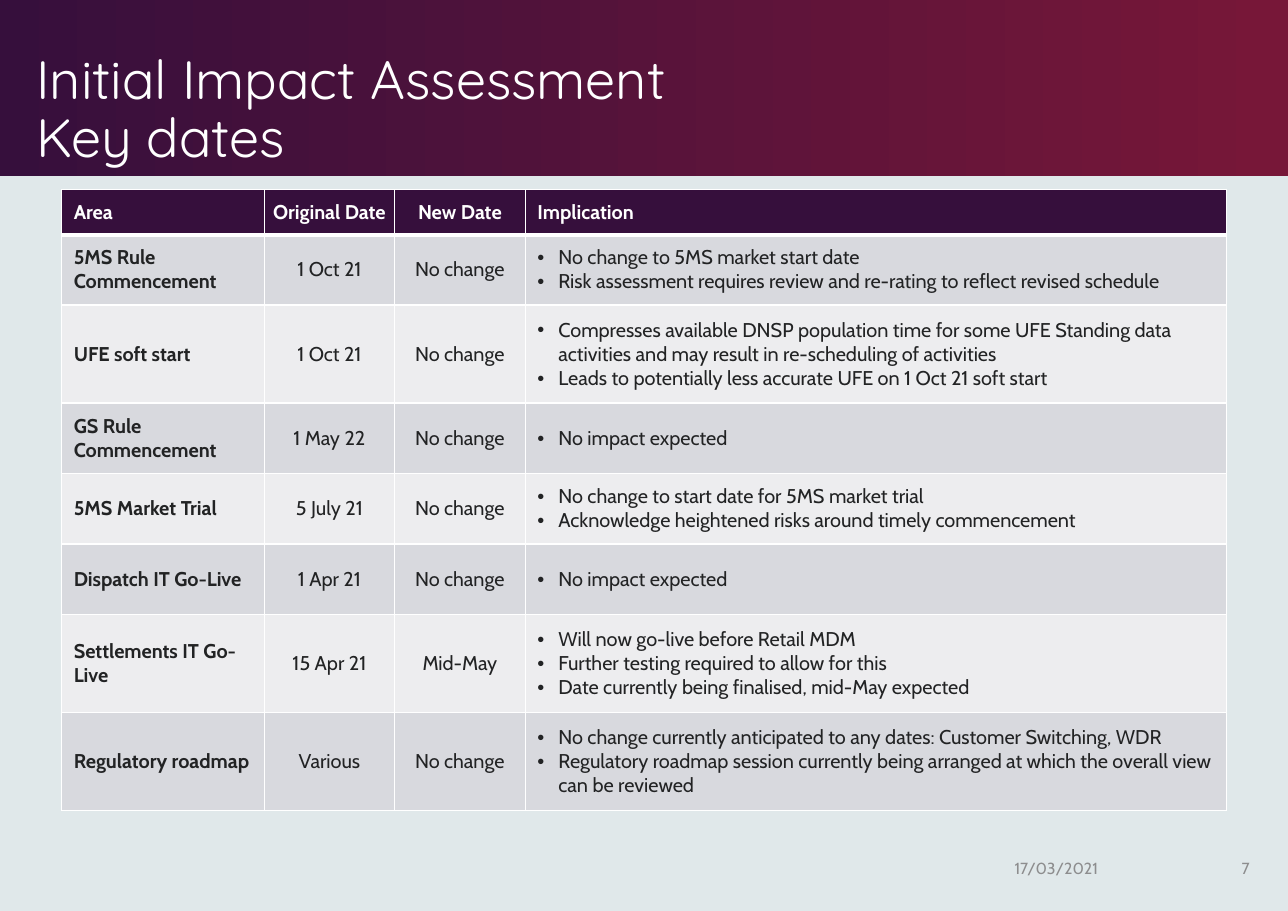
from dataclasses import dataclass

from lxml import etree
from pptx import Presentation
from pptx.dml.color import RGBColor
from pptx.enum.shapes import MSO_SHAPE
from pptx.enum.text import MSO_ANCHOR, MSO_AUTO_SIZE, PP_ALIGN
from pptx.oxml.ns import qn
from pptx.slide import Slide
from pptx.table import _Cell
from pptx.text.text import TextFrame
from pptx.util import Inches, Length, Pt

LEFT, CENTER, RIGHT = PP_ALIGN.LEFT, PP_ALIGN.CENTER, PP_ALIGN.RIGHT
MIDDLE, BOTTOM = MSO_ANCHOR.MIDDLE, MSO_ANCHOR.BOTTOM
RECTANGLE = MSO_SHAPE.RECTANGLE
NO_AUTOFIT = MSO_AUTO_SIZE.NONE
TITLE_ONLY = 5

SLIDE_WIDTH, SLIDE_HEIGHT = Inches(11.69), Inches(8.27)


@dataclass(frozen=True)
class Theme:
    background: str = "E0E8EA"
    plum: str = "360F3C"
    crimson: str = "771738"
    white: str = "FFFFFF"
    ink: str = "222324"
    footer: str = "8D8D8E"
    row_fills: tuple[str, str] = ("D8D9DE", "EDEDEF")
    heading_font: str = "Quicksand"
    body_font: str = "Cabin"
    title_size: float = 35.3
    table_size: float = 13
    footer_size: float = 10.5
    rule: float = 1
    header_rule: float = 3


@dataclass(frozen=True)
class Frame:
    """A box in percent of the slide's width and height."""
    left: float
    top: float
    width: float
    height: float

    def box(self) -> tuple[Length, Length, Length, Length]:
        return across(self.left), down(self.top), across(self.width), down(self.height)


@dataclass(frozen=True)
class Column:
    heading: str
    width: float
    align: PP_ALIGN
    header_inset: float = 0.11
    body_inset: tuple[float, float] = (0.11, 0.06)
    bold: bool = False
    bulleted: bool = False


@dataclass(frozen=True)
class Milestone:
    area: str
    original_date: str
    new_date: str
    implications: tuple[str, ...]
    height: float


@dataclass(frozen=True)
class FooterItem:
    text: str
    frame: Frame
    align: PP_ALIGN


THEME = Theme()
BANNER = Frame(0, 0, 100, 19.35)
TITLE = Frame(1.97, 1.93, 73.82, 17.29)
TABLE_LEFT, TABLE_TOP = 4.79, 20.8
HEADER_ROW, SHORT_ROW, TALL_ROW = 4.96, 7.74, 10.76
BULLET_INDENT = Inches(0.19)

COLUMNS = (
    Column("Area", 15.74, LEFT, bold=True),
    Column("Original Date", 10.09, CENTER, header_inset=0.04),
    Column("New Date", 10.18, CENTER, body_inset=(0.04, 0.04)),
    Column("Implication", 54.45, LEFT, bulleted=True),
)
MILESTONES = (
    Milestone("5MS Rule Commencement", "1 Oct 21", "No change", (
        "No change to 5MS market start date",
        "Risk assessment requires review and re-rating to reflect revised schedule"), SHORT_ROW),
    Milestone("UFE soft start", "1 Oct 21", "No change", (
        "Compresses available DNSP population time for some UFE Standing data "
        "activities and may result in re-scheduling of activities",
        "Leads to potentially less accurate UFE on 1 Oct 21 soft start"), TALL_ROW),
    Milestone("GS Rule Commencement", "1 May 22", "No change",
              ("No impact expected",), SHORT_ROW),
    Milestone("5MS Market Trial", "5 July 21", "No change", (
        "No change to start date for 5MS market trial",
        "Acknowledge heightened risks around timely commencement"), SHORT_ROW),
    Milestone("Dispatch IT Go-Live", "1 Apr 21", "No change",
              ("No impact expected",), SHORT_ROW),
    Milestone("Settlements IT Go-Live", "15 Apr 21", "Mid-May", (
        "Will now go-live before Retail MDM",
        "Further testing required to allow for this",
        "Date currently being finalised, mid-May expected"), TALL_ROW),
    Milestone("Regulatory roadmap", "Various", "No change", (
        "No change currently anticipated to any dates: Customer Switching, WDR",
        "Regulatory roadmap session currently being arranged at which the overall "
        "view can be reviewed"), TALL_ROW),
)
FOOTER = (
    FooterItem("17/03/2021", Frame(77.93, 92.62, 14.2, 5.32), LEFT),
    FooterItem("7", Frame(93.16, 92.62, 4.7, 5.32), RIGHT),
)


def across(percent: float) -> Length:
    return Length(round(SLIDE_WIDTH * percent / 100))


def down(percent: float) -> Length:
    return Length(round(SLIDE_HEIGHT * percent / 100))


def format_text(frame: TextFrame, font: str, size: float, color: str,
                align: PP_ALIGN, bold: bool = False) -> None:
    for paragraph in frame.paragraphs:
        paragraph.alignment = align
        for run in paragraph.runs:
            run.font.name = font
            run.font.size = Pt(size)
            run.font.bold = bold
            run.font.color.rgb = RGBColor.from_string(color)


def add_bullets(frame: TextFrame) -> None:
    for paragraph in frame.paragraphs:
        properties = paragraph._p.get_or_add_pPr()
        properties.set("marL", str(BULLET_INDENT))
        properties.set("indent", str(-BULLET_INDENT))
        etree.SubElement(properties, qn("a:buFont")).set("typeface", "Arial")
        etree.SubElement(properties, qn("a:buChar")).set("char", "•")


def set_borders(cell: _Cell, top: float, bottom: float) -> None:
    widths = {"a:lnL": THEME.rule, "a:lnR": THEME.rule, "a:lnT": top, "a:lnB": bottom}
    properties = cell._tc.get_or_add_tcPr()
    for position, (side, width) in enumerate(widths.items()):
        line = etree.Element(qn(side), w=str(Pt(width)))
        fill = etree.SubElement(line, qn("a:solidFill"))
        etree.SubElement(fill, qn("a:srgbClr")).set("val", THEME.white)
        properties.insert(position, line)


def fill_cell(cell: _Cell, text: str, column: Column, row: int) -> None:
    """Write and style one cell; row 0 is the header."""
    header = row == 0
    cell.text_frame.text = text
    if column.bulleted and not header:
        add_bullets(cell.text_frame)
    format_text(cell.text_frame, THEME.body_font, THEME.table_size,
                THEME.white if header else THEME.ink, column.align, header or column.bold)
    side, edge = (column.header_inset, 0.06) if header else column.body_inset
    cell.margin_left = cell.margin_right = Inches(side)
    cell.margin_top = cell.margin_bottom = Inches(edge)
    cell.vertical_anchor = MIDDLE
    cell.fill.solid()
    cell.fill.fore_color.rgb = RGBColor.from_string(
        THEME.plum if header else THEME.row_fills[(row - 1) % 2])
    set_borders(cell, THEME.header_rule if row == 1 else THEME.rule,
                THEME.header_rule if header else THEME.rule)


def add_banner(slide: Slide) -> None:
    banner = slide.shapes.add_shape(RECTANGLE, *BANNER.box())
    banner.shadow.inherit = False
    banner.line.fill.background()
    banner.fill.gradient()
    banner.fill.gradient_angle = 0
    stops = ((0, THEME.plum), (0.99, THEME.crimson))
    for stop, (position, color) in zip(banner.fill.gradient_stops, stops):
        stop.position = position
        stop.color.rgb = RGBColor.from_string(color)
    slide.shapes._spTree.insert(2, banner._element)  # behind the title


def add_title(slide: Slide) -> None:
    title = slide.shapes.title
    title.left, title.top, title.width, title.height = TITLE.box()
    frame = title.text_frame
    frame.text = "Initial Impact Assessment\vKey dates"
    frame.word_wrap = True
    frame.auto_size = NO_AUTOFIT
    frame.vertical_anchor = BOTTOM
    frame.paragraphs[0].line_spacing = 0.9
    format_text(frame, THEME.heading_font, THEME.title_size, THEME.white, LEFT)


def add_dates_table(slide: Slide) -> None:
    heights = [HEADER_ROW, *(milestone.height for milestone in MILESTONES)]
    frame = Frame(TABLE_LEFT, TABLE_TOP, sum(c.width for c in COLUMNS), sum(heights))
    dates = slide.shapes.add_table(len(heights), len(COLUMNS), *frame.box()).table
    dates.first_row = dates.horz_banding = False
    for grid_column, column in zip(dates.columns, COLUMNS):
        grid_column.width = across(column.width)
    for grid_row, height in zip(dates.rows, heights):
        grid_row.height = down(height)
    lines = [[column.heading for column in COLUMNS]]
    lines += [[m.area, m.original_date, m.new_date, "\n".join(m.implications)]
              for m in MILESTONES]
    for row, texts in enumerate(lines):
        for index, (text, column) in enumerate(zip(texts, COLUMNS)):
            fill_cell(dates.cell(row, index), text, column, row)


def add_footer_item(slide: Slide, item: FooterItem) -> None:
    frame = slide.shapes.add_textbox(*item.frame.box()).text_frame
    frame.text = item.text
    frame.word_wrap = True
    frame.vertical_anchor = MIDDLE
    format_text(frame, THEME.body_font, THEME.footer_size, THEME.footer, item.align)


def main() -> None:
    deck = Presentation()
    deck.slide_width, deck.slide_height = SLIDE_WIDTH, SLIDE_HEIGHT
    slide = deck.slides.add_slide(deck.slide_layouts[TITLE_ONLY])
    slide.background.fill.solid()
    slide.background.fill.fore_color.rgb = RGBColor.from_string(THEME.background)
    add_banner(slide)
    add_title(slide)
    add_dates_table(slide)
    for item in FOOTER:
        add_footer_item(slide, item)
    deck.save("out.pptx")


if __name__ == "__main__":
    main()
